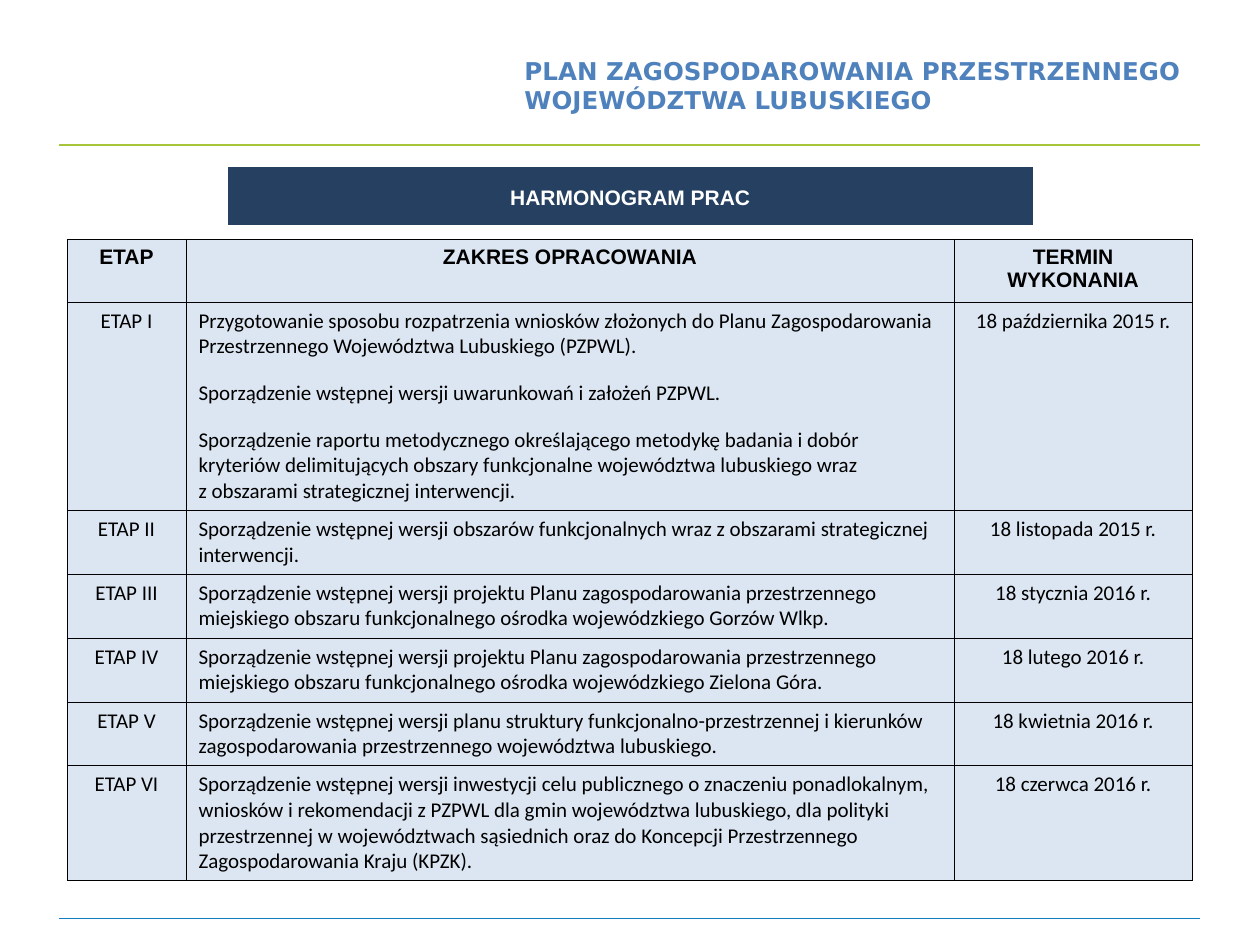
from lxml.etree import SubElement
from pptx import Presentation
from pptx.dml.color import RGBColor
from pptx.enum.shapes import MSO_CONNECTOR
from pptx.enum.text import MSO_ANCHOR, MSO_AUTO_SIZE, PP_ALIGN
from pptx.oxml.ns import qn
from pptx.util import Pt

TITLE = "PLAN ZAGOSPODAROWANIA PRZESTRZENNEGO WOJEWÓDZTWA LUBUSKIEGO"
BANNER = "HARMONOGRAM PRAC"
HEADINGS = ["ETAP", "ZAKRES OPRACOWANIA", "TERMIN WYKONANIA"]
# stage, scope paragraphs, deadline, row height
STAGES = [
    ("ETAP I", [
        "Przygotowanie sposobu rozpatrzenia wniosków złożonych do Planu Zagospodarowania "
        "Przestrzennego Województwa Lubuskiego (PZPWL).",
        "Sporządzenie wstępnej wersji uwarunkowań i założeń PZPWL.",
        "Sporządzenie raportu metodycznego określającego metodykę badania i dobór kryteriów "
        "delimitujących obszary funkcjonalne województwa lubuskiego wraz \v"
        "z obszarami strategicznej interwencji.",
    ], "18 października 2015 r.", 117.7),
    ("ETAP II", [
        "Sporządzenie wstępnej wersji obszarów funkcjonalnych wraz z obszarami strategicznej "
        "interwencji.",
    ], "18 listopada 2015 r.", 36),
    ("ETAP III", [
        "Sporządzenie wstępnej wersji projektu Planu zagospodarowania przestrzennego miejskiego "
        "obszaru funkcjonalnego ośrodka wojewódzkiego Gorzów Wlkp.",
    ], "18 stycznia 2016 r.", 36),
    ("ETAP IV", [
        "Sporządzenie wstępnej wersji projektu Planu zagospodarowania przestrzennego miejskiego "
        "obszaru funkcjonalnego ośrodka wojewódzkiego Zielona Góra.",
    ], "18 lutego 2016 r.", 36),
    ("ETAP V", [
        "Sporządzenie wstępnej wersji planu struktury funkcjonalno-przestrzennej i kierunków "
        "zagospodarowania przestrzennego województwa lubuskiego.",
    ], "18 kwietnia 2016 r.", 36),
    ("ETAP VI", [
        "Sporządzenie wstępnej wersji inwestycji celu publicznego o znaczeniu ponadlokalnym, "
        "wniosków i rekomendacji z PZPWL dla gmin województwa lubuskiego, dla polityki "
        "przestrzennej w województwach sąsiednich oraz do Koncepcji Przestrzennego "
        "Zagospodarowania Kraju (KPZK).",
    ], "18 czerwca 2016 r.", 65.1),
]
HEADING_HEIGHT = 36
COLUMNS = [68, 439, 136]
RULES = [(82.8, "A7C539"), (524.9, "147CC1")]

TITLE_FONT = {"name": "DejaVu Sans", "size": Pt(14), "bold": True}
HEADING_FONT = {"name": "Arial", "size": Pt(12), "bold": True}
BODY_FONT = {"name": "Calibri", "size": Pt(12), "bold": False}
CENTERED = {"alignment": PP_ALIGN.CENTER}
SPACED = {"alignment": PP_ALIGN.LEFT, "space_after": Pt(12)}
GRID_BORDERS = dict.fromkeys("LRTB", ("000000", 0.25))
BANNER_BORDERS = dict.fromkeys("LRT", ("FFFFFF", 1)) | {"B": ("FFFFFF", 3)}


def rgb(value):
    return RGBColor.from_string(value)


def apply(target, values):
    for name, value in values.items():
        setattr(target, name, value)


def write(frame, texts, font, color, layout):
    for index, text in enumerate(texts):
        para = frame.paragraphs[0] if index == 0 else frame.add_paragraph()
        para.text = text
        apply(para, layout)
        for span in para.runs:
            apply(span.font, font)
            span.font.color.rgb = rgb(color)


def format_cell(cell, fill, borders):
    properties = cell._tc.get_or_add_tcPr()
    for side, (color, width) in borders.items():
        line = SubElement(properties, qn(f"a:ln{side}"), w=str(int(Pt(width))))
        solid = SubElement(line, qn("a:solidFill"))
        SubElement(solid, qn("a:srgbClr"), val=color)
    cell.fill.solid()
    cell.fill.fore_color.rgb = rgb(fill)


def add_grid(slide, left, top, widths, heights):
    frame = slide.shapes.add_table(len(heights), len(widths), Pt(left), Pt(top),
                                   Pt(sum(widths)), Pt(sum(heights)))
    for column, width in zip(frame.table.columns, widths):
        column.width = Pt(width)
    for row, height in zip(frame.table.rows, heights):
        row.height = Pt(height)
    return frame.table


def add_rule(slide, y, color):
    rule = slide.shapes.add_connector(MSO_CONNECTOR.STRAIGHT, Pt(34), Pt(y), Pt(686), Pt(y))
    rule.line.color.rgb = rgb(color)
    rule.line.width = Pt(0.75)
    SubElement(rule._element.spPr, qn("a:effectLst"))


def add_title(slide):
    title = slide.shapes.title
    apply(title, {"left": Pt(292.5), "top": Pt(28.3), "width": Pt(396), "height": Pt(41)})
    apply(title.text_frame, {"word_wrap": True, "auto_size": MSO_AUTO_SIZE.NONE,
                             "vertical_anchor": MSO_ANCHOR.TOP})
    write(title.text_frame, [TITLE], TITLE_FONT, "4F81BD", {"alignment": PP_ALIGN.LEFT})


def add_schedule(slide):
    heights = [HEADING_HEIGHT] + [stage[-1] for stage in STAGES]
    table = add_grid(slide, 38.3, 136.6, COLUMNS, heights)
    rows = [[[heading] for heading in HEADINGS]]
    rows += [[[name], scope, [deadline]] for name, scope, deadline, _ in STAGES]
    for r, row in enumerate(rows):
        for c, texts in enumerate(row):
            cell = table.cell(r, c)
            format_cell(cell, "DCE6F2", GRID_BORDERS)
            layout = SPACED if r and c == 1 else CENTERED
            write(cell.text_frame, texts, BODY_FONT if r else HEADING_FONT, "000000", layout)
            cell.text_frame.paragraphs[-1].space_after = Pt(0)


def add_banner(slide):
    cell = add_grid(slide, 129.8, 95, [460.8], [35]).cell(0, 0)
    format_cell(cell, "254061", BANNER_BORDERS)
    apply(cell, {"vertical_anchor": MSO_ANCHOR.MIDDLE, "margin_left": Pt(5),
                 "margin_right": Pt(5), "margin_top": 0, "margin_bottom": 0})
    write(cell.text_frame, [BANNER], HEADING_FONT, "FFFFFF", CENTERED | {"line_spacing": 1.15})


def main():
    deck = Presentation()
    apply(deck, {"slide_width": Pt(720), "slide_height": Pt(540)})
    slide = deck.slides.add_slide(deck.slide_layouts[5])
    for y, color in RULES:
        add_rule(slide, y, color)
    add_title(slide)
    add_schedule(slide)
    add_banner(slide)
    deck.save("out.pptx")


if __name__ == "__main__":
    main()
